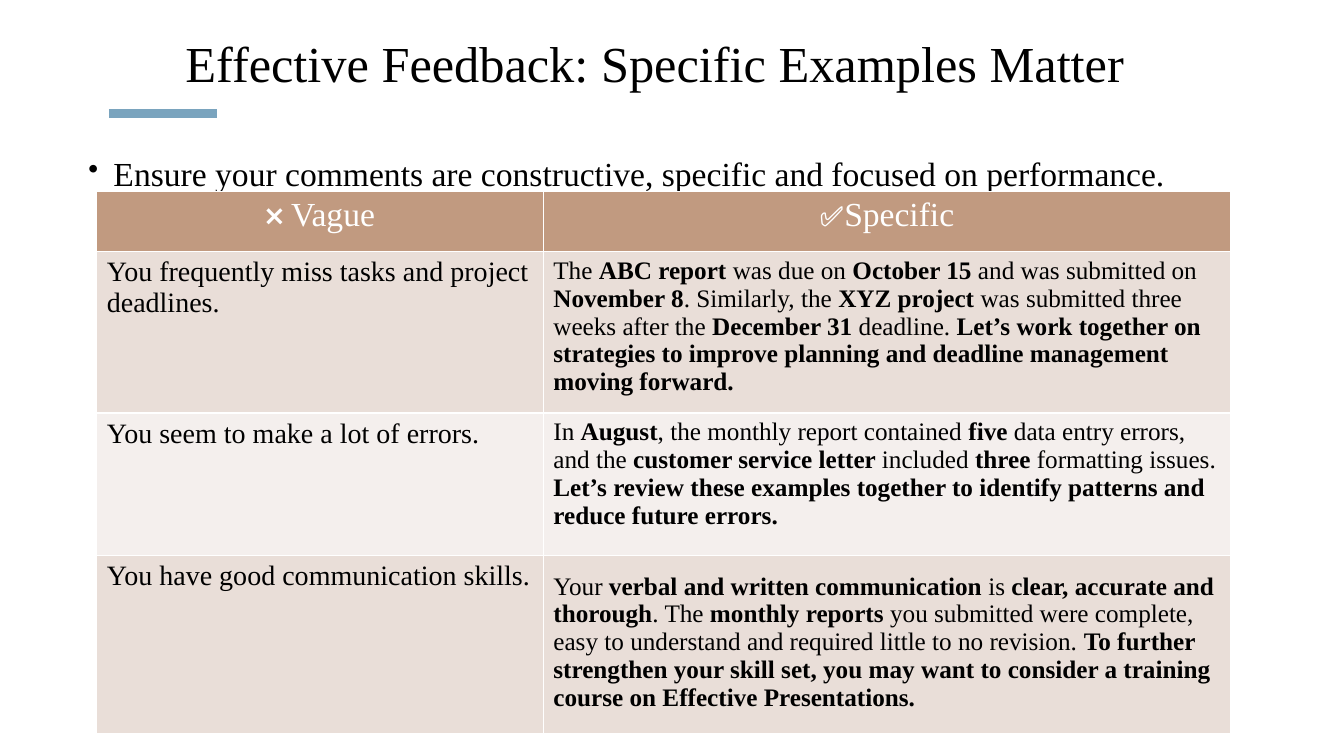
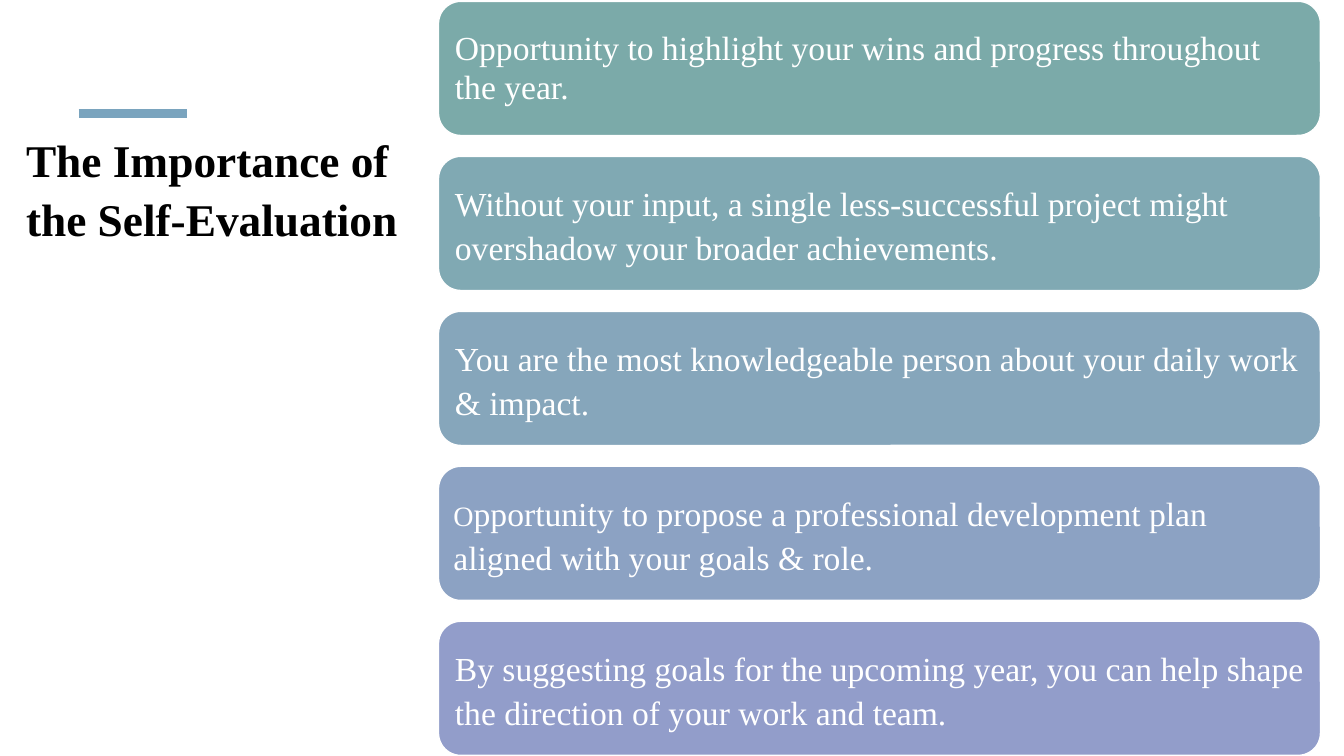
from lxml import etree
from pptx import Presentation
from pptx.dml.color import RGBColor
from pptx.enum import shapes, text
from pptx.oxml import ns
from pptx.util import Pt

SERIF = "Times New Roman"
SYMBOL = {"name": "Lato", "size": Pt(20)}
BLACK, WHITE, ACCENT = "000000", "FFFFFF", "7AA4BE"
HEADER_FILL, ROW_FILLS = "C19A80", ("E9DED8", "F4EFED")

FEEDBACK_TITLE = "Effective Feedback: Specific Examples Matter"
FEEDBACK_ADVICE = "Ensure your comments are constructive, specific and focused on performance."
TABLE_HEADER = [
    [("❌ ", SYMBOL), ("Vague", {})],
    [("✅", SYMBOL), ("Specific", {})],
]
# Text between double asterisks is bold.
TABLE_ROWS = [
    ("You frequently miss tasks and project deadlines.",
     "The **ABC report **was due on **October 15 **and was submitted on **November 8**. "
     "Similarly, the **XYZ project **was submitted three weeks after the **December 31 **deadline. "
     "**Let’s work together on strategies to improve planning and deadline management "
     "moving forward.**"),
    ("You seem to make a lot of errors.",
     "In **August**, the monthly report contained **five** data entry errors, and the "
     "**customer service letter **included **three **formatting issues. "
     "**Let’s review these examples together to identify patterns and reduce future errors.**"),
    ("You have good communication skills.",
     "Your **verbal and written communication **is **clear, accurate and thorough**. "
     "The **monthly reports **you submitted were complete, easy to understand and required "
     "little to no revision. **To further strengthen your skill set, you may want to consider "
     "a training course on Effective Presentations.**"),
]
COLUMN_WIDTHS = (319, 491)
ROW_HEIGHTS = (43, 107, 102, 127)
LAST_CELL_TOP_MARGIN = 12

EVALUATION_TITLE = "The Importance of the Self-Evaluation"
# Fill, line spacing, inset, runs
CARDS = [
    ("7BAAA9", 0.97, 7.2,
     [("Opportunity to highlight your wins and progress throughout the year.", {})]),
    ("80A9B3", 1.08, 7.2,
     [("Without your input, a single less-successful project might overshadow your "
       "broader achievements.", {})]),
    ("86A6BB", 1.08, 7.2,
     [("You are the most knowledgeable person about your daily work & impact.", {})]),
    ("8CA2C3", 1.08, 6,
     [("O", {"size": Pt(20)}),
      ("pportunity to propose a professional development plan aligned with your "
       "goals & role.", {})]),
    ("929DCA", 1.08, 7.2,
     [("By suggesting goals for the upcoming year, you can help shape the direction of "
       "your work and team.", {})]),
]
CARD_LEFT, CARD_TOP, CARD_WIDTH, CARD_HEIGHT, CARD_PITCH = 313.2, 1, 630, 95.8, 110.7


def rgb(colour):
    return RGBColor.from_string(colour)


def points(*lengths):
    return [Pt(length) for length in lengths]


def write(paragraph, runs, size, colour=BLACK, bold=False):
    """Fill a paragraph with (text, font overrides) runs on a common font."""
    font = paragraph.font
    font.name, font.size, font.bold = SERIF, Pt(size), bold
    font.color.rgb = rgb(colour)
    for content, overrides in runs:
        run = paragraph.add_run()
        run.text = content
        for attribute, value in overrides.items():
            setattr(run.font, attribute, value)


def bold_runs(marked):
    return [(part, {"bold": True} if index % 2 else {})
            for index, part in enumerate(marked.split("**")) if part]


def add_text_box(slide, box, anchor):
    frame = slide.shapes.add_textbox(*points(*box)).text_frame
    frame.word_wrap = True
    frame.vertical_anchor = anchor
    return frame.paragraphs[0]


def add_accent_bar(slide, left):
    bar = slide.shapes.add_connector(
        shapes.MSO_CONNECTOR.STRAIGHT, *points(left, 81.2, left + 77.2, 81.2))
    bar.line.color.rgb = rgb(ACCENT)
    bar.line.width = Pt(6)
    etree.SubElement(bar.line._get_or_add_ln().getparent(), ns.qn("a:effectLst"))


def add_bullet(paragraph):
    properties = paragraph._p.get_or_add_pPr()
    properties.set("marL", str(Pt(18)))
    properties.set("indent", str(-Pt(18)))
    etree.SubElement(properties, ns.qn("a:buSzPct"), val="87000")
    etree.SubElement(properties, ns.qn("a:buChar"), char="•")


def style_cell(cell, fill):
    """Fill the cell and give it thin white borders."""
    cell.fill.solid()
    cell.fill.fore_color.rgb = rgb(fill)
    properties = cell._tc.get_or_add_tcPr()
    for index, side in enumerate("LRTB"):
        border = etree.Element(ns.qn("a:ln" + side), w=str(Pt(1)))
        solid = etree.SubElement(border, ns.qn("a:solidFill"))
        etree.SubElement(solid, ns.qn("a:srgbClr"), val=WHITE)
        properties.insert(index, border)


def add_comparison_table(slide):
    box = points(69.1, 136.8, sum(COLUMN_WIDTHS), sum(ROW_HEIGHTS))
    table = slide.shapes.add_table(len(ROW_HEIGHTS), len(COLUMN_WIDTHS), *box).table
    table.first_row = table.horz_banding = False
    for column, width in zip(table.columns, COLUMN_WIDTHS):
        column.width = Pt(width)
    for row, height in zip(table.rows, ROW_HEIGHTS):
        row.height = Pt(height)
    for column, runs in enumerate(TABLE_HEADER):
        cell = table.cell(0, column)
        style_cell(cell, HEADER_FILL)
        paragraph = cell.text_frame.paragraphs[0]
        paragraph.alignment = text.PP_ALIGN.CENTER
        write(paragraph, runs, 24, WHITE)
    for row, contents in enumerate(TABLE_ROWS, start=1):
        for column, (content, size) in enumerate(zip(contents, (20, 18))):
            cell = table.cell(row, column)
            style_cell(cell, ROW_FILLS[(row - 1) % 2])
            write(cell.text_frame.paragraphs[0], bold_runs(content), size)
    table.cell(len(TABLE_ROWS), 1).margin_top = Pt(LAST_CELL_TOP_MARGIN)


def add_card(slide, top, fill, spacing, inset, runs):
    card = slide.shapes.add_shape(
        shapes.MSO_SHAPE.ROUNDED_RECTANGLE,
        *points(CARD_LEFT, top, CARD_WIDTH, CARD_HEIGHT))
    card.shadow.inherit = False
    card.fill.solid()
    card.fill.fore_color.rgb = rgb(fill)
    card.line.color.rgb = rgb(WHITE)
    card.line.width = Pt(1)
    frame = card.text_frame
    frame.word_wrap = True
    frame.vertical_anchor = text.MSO_ANCHOR.MIDDLE
    frame.margin_left = frame.margin_right = Pt(inset)
    frame.margin_top = frame.margin_bottom = Pt(inset)
    paragraph = frame.paragraphs[0]
    paragraph.alignment = text.PP_ALIGN.LEFT
    paragraph.line_spacing = spacing
    write(paragraph, runs, 24, WHITE)


def build_feedback_slide(slide):
    add_accent_bar(slide, 77.8)
    title = add_text_box(slide, (44, 15, 848, 59), text.MSO_ANCHOR.MIDDLE)
    title.alignment = text.PP_ALIGN.CENTER
    write(title, [(FEEDBACK_TITLE, {})], 36)
    advice = add_text_box(slide, (56, 98, 848, 45), text.MSO_ANCHOR.MIDDLE)
    add_bullet(advice)
    advice.line_spacing = 1.2
    write(advice, [(FEEDBACK_ADVICE, {})], 24)
    add_comparison_table(slide)


def build_evaluation_slide(slide):
    title = add_text_box(slide, (11.5, 88, 284.5, 96.5), text.MSO_ANCHOR.TOP)
    title.line_spacing = 1.08
    write(title, [(EVALUATION_TITLE, {})], 32.4, bold=True)
    add_accent_bar(slide, 56.2)
    for index, card in enumerate(CARDS):
        add_card(slide, CARD_TOP + index * CARD_PITCH, *card)


def main():
    presentation = Presentation()
    presentation.slide_width, presentation.slide_height = points(960, 540)
    blank = presentation.slide_layouts[6]
    for build in (build_feedback_slide, build_evaluation_slide):
        build(presentation.slides.add_slide(blank))
    presentation.save("out.pptx")


if __name__ == "__main__":
    main()
